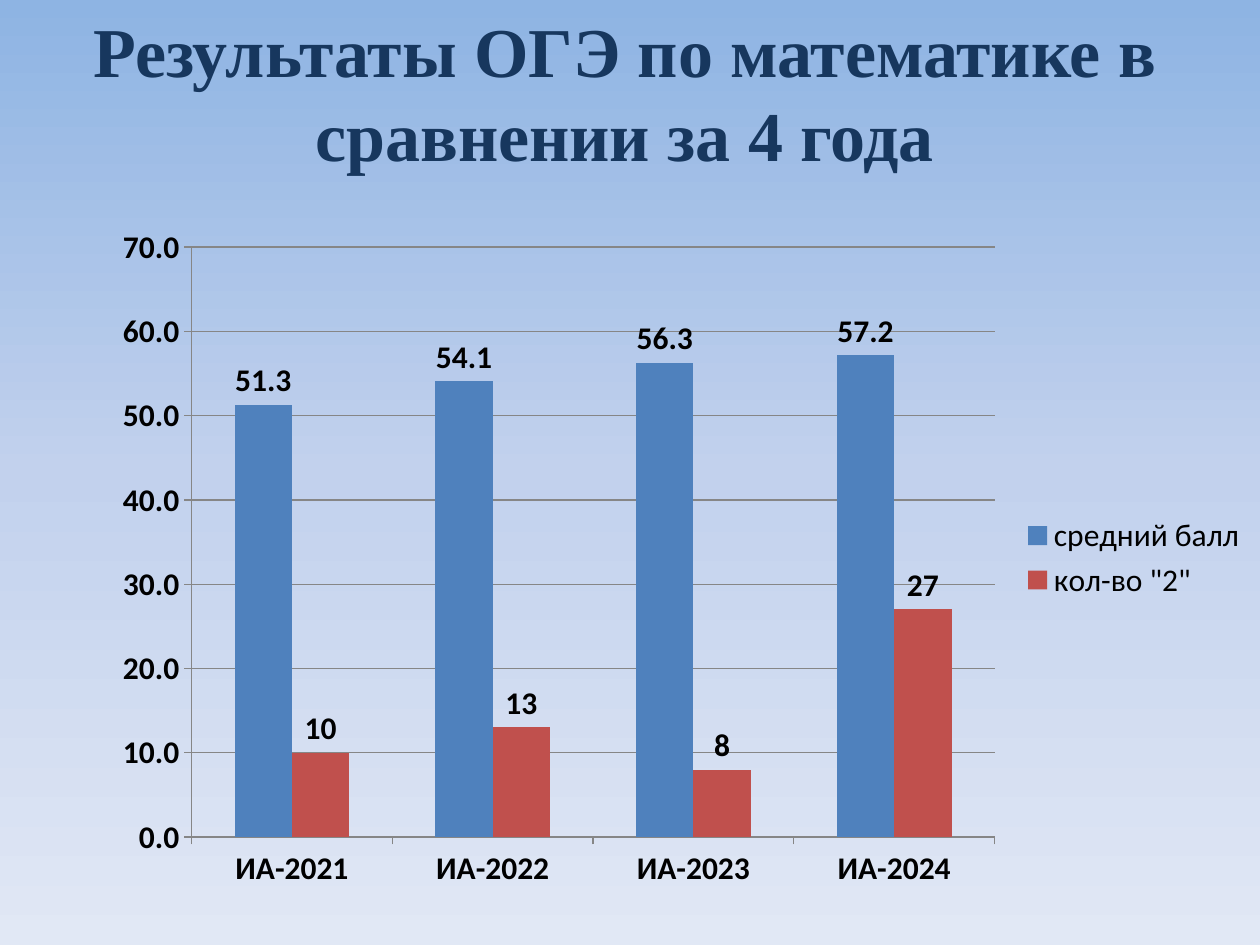
from copy import deepcopy

from pptx import Presentation
from pptx.chart.data import CategoryChartData
from pptx.dml.color import RGBColor
from pptx.enum.chart import XL_CHART_TYPE, XL_LABEL_POSITION, XL_LEGEND_POSITION, XL_TICK_MARK
from pptx.enum.text import MSO_ANCHOR, PP_ALIGN
from pptx.oxml.ns import qn
from pptx.util import Pt

COLUMN = XL_CHART_TYPE.COLUMN_CLUSTERED
ABOVE = XL_LABEL_POSITION.OUTSIDE_END
RIGHT = XL_LEGEND_POSITION.RIGHT
OUTSIDE = XL_TICK_MARK.OUTSIDE
MIDDLE = MSO_ANCHOR.MIDDLE
CENTER = PP_ALIGN.CENTER

BLACK = RGBColor(0, 0, 0)
NAVY = RGBColor(0x17, 0x37, 0x5E)
BLUE = RGBColor(0x4F, 0x81, 0xBD)
RED = RGBColor(0xC0, 0x50, 0x4D)
GREY = RGBColor(0x86, 0x86, 0x86)
SKY = [(0, RGBColor(0x8E, 0xB4, 0xE3)),
       (0.5, RGBColor(0xC2, 0xD1, 0xED)),
       (1, RGBColor(0xE1, 0xE8, 0xF5))]

YEARS = ["ИА-2021", "ИА-2022", "ИА-2023", "ИА-2024"]
# Name, values, number format, colour
SERIES = [("средний балл", (51.3, 54.1, 56.3, 57.2), "0.0", BLUE),
          ('кол-во "2"', (10, 13, 8, 27), "General", RED)]


class Page:
    head_font = "Times New Roman"
    body_font = "Calibri"
    head_size = Pt(40)
    body_size = Pt(18)

    def __init__(self, deck):
        self.slide = deck.slides.add_slide(deck.slide_layouts[6])

    def backdrop(self, stops):
        fill = self.slide.background.fill
        fill.gradient()
        fill.gradient_angle = 270
        # A new gradient has two stops; add the missing ones
        group = self.slide.element.find(".//" + qn("a:gsLst"))
        while len(group) < len(stops):
            group.append(deepcopy(group[0]))
        for stop, (place, color) in zip(fill.gradient_stops, stops):
            stop.color.rgb = color
            stop.position = place

    def title(self, text, *box):
        frame = self.slide.shapes.add_textbox(*box).text_frame
        frame.word_wrap = True
        frame.vertical_anchor = MIDDLE
        para = frame.paragraphs[0]
        para.alignment = CENTER
        run = para.add_run()
        run.text = text
        font = run.font
        font.name, font.size, font.bold = self.head_font, self.head_size, True
        font.color.rgb = NAVY

    def style(self, font, bold):
        font.name, font.size, font.bold = self.body_font, self.body_size, bold
        font.color.rgb = BLACK

    def columns(self, years, series, *box):
        data = CategoryChartData()
        data.categories = years
        for name, values, form, _ in series:
            data.add_series(name, values, form)
        chart = self.slide.shapes.add_chart(COLUMN, *box, data).chart
        chart.has_title = False
        self.style(chart.font, False)

        # Axes
        for axis in (chart.category_axis, chart.value_axis):
            axis.major_tick_mark = OUTSIDE
            axis.format.line.color.rgb = GREY
            self.style(axis.tick_labels.font, True)
        scale = chart.value_axis
        scale.minimum_scale, scale.maximum_scale, scale.major_unit = 0, 70, 10
        scale.tick_labels.number_format = "0.0"
        scale.tick_labels.number_format_is_linked = False
        scale.major_gridlines.format.line.color.rgb = GREY

        # Legend
        chart.has_legend = True
        chart.legend.position = RIGHT
        chart.legend.include_in_layout = False
        self.style(chart.legend.font, False)

        # Columns and their labels
        plot = chart.plots[0]
        plot.gap_width, plot.overlap = 150, 0
        plot.vary_by_categories = False
        for bars, (_, _, form, color) in zip(plot.series, series):
            bars.format.fill.solid()
            bars.format.fill.fore_color.rgb = color
            labels = bars.data_labels
            labels.show_value = True
            labels.position = ABOVE
            labels.number_format = form
            labels.number_format_is_linked = False
            self.style(labels.font, True)


def main():
    deck = Presentation()
    deck.slide_width, deck.slide_height = Pt(720), Pt(540)
    page = Page(deck)
    page.backdrop(SKY)
    page.columns(YEARS, SERIES, Pt(57), Pt(122.5), Pt(663), Pt(392.5))
    page.title("Результаты ОГЭ по математике в сравнении за 4 года",
               Pt(36.5), Pt(0), Pt(641), Pt(104.5))
    deck.save("out.pptx")


if __name__ == "__main__":
    main()
